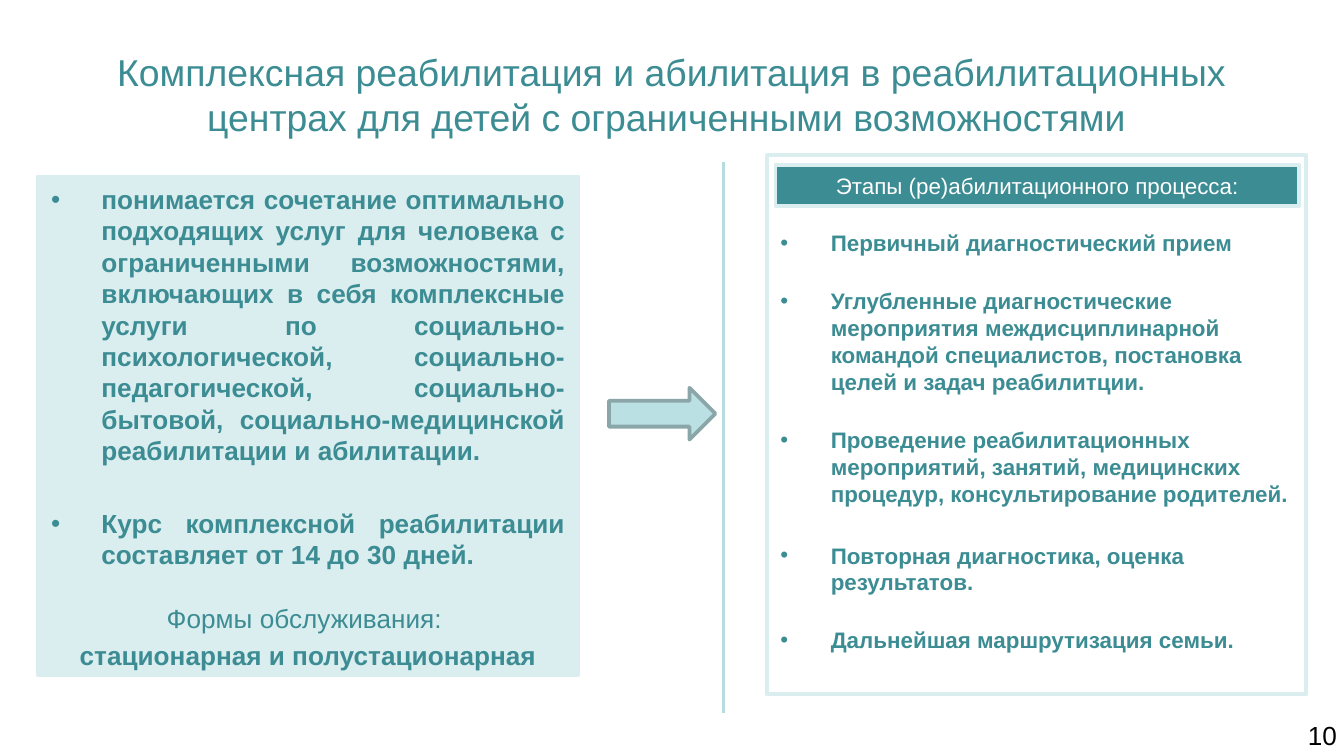
from lxml import etree
from pptx import Presentation
from pptx import util as u
from pptx.dml.color import RGBColor
from pptx.enum import shapes, text
from pptx.oxml.ns import qn

PX = 9525  # EMU: 96 px to the inch
TEAL, PALE, WHITE = "3C8C93", "DAEDEF", "FFFFFF"
ALIGN = text.PP_ALIGN
LEFT, CENTER, RIGHT, JUSTIFY = ALIGN.LEFT, ALIGN.CENTER, ALIGN.RIGHT, ALIGN.JUSTIFY

TITLE = ("Комплексная реабилитация и абилитация в реабилитационных "
         "центрах для детей с ограниченными возможностями ")

# text, space before in points, bullet, bold, alignment
SERVICES = [
    ("понимается сочетание оптимально подходящих услуг для человека с "
     "ограниченными возможностями, включающих в себя комплексные услуги по "
     "социально-психологической, социально-педагогической, социально-бытовой, "
     "социально-медицинской реабилитации и абилитации. ", 0, True, True, JUSTIFY),
    ("Курс комплексной реабилитации составляет от 14 до 30 дней. ",
     22.3, True, True, JUSTIFY),
    ("Формы обслуживания: ", 17, False, False, CENTER),
    ("стационарная и полустационарная", 3, False, True, CENTER),
]
STAGES = [
    ("Первичный диагностический прием", 0),
    ("Углубленные диагностические мероприятия междисциплинарной командой "
     "специалистов, постановка целей и задач реабилитции.", 16.6),
    ("Проведение реабилитационных мероприятий, занятий, медицинских процедур, "
     "консультирование родителей.", 16.6),
    ("Повторная диагностика, оценка результатов.", 18.8),
    ("Дальнейшая маршрутизация семьи.", 16.6),
]


def px(*lengths):
    return [u.Emu(n * PX) for n in lengths]


def rgb(color):
    return RGBColor.from_string(color)


def style_fill(fill, color):
    fill.solid()
    fill.fore_color.rgb = rgb(color)


def style_line(line, color, width):
    line.color.rgb = rgb(color)
    line.width = u.Pt(width)


def format_paragraph(p, size, color, bold=False, align=LEFT):
    p.alignment = align
    for r in p.runs:
        r.font.name = "Arial"
        r.font.size = u.Pt(size)
        r.font.bold = bold
        r.font.color.rgb = rgb(color)


def add_bullet(p, indent=36):
    """Give the paragraph a round bullet with a hanging indent."""
    pPr = p._p.get_or_add_pPr()
    pPr.set("marL", str(indent * PX))
    pPr.set("indent", str(-indent * PX))
    etree.SubElement(pPr, qn("a:buFont"), typeface="Arial")
    etree.SubElement(pPr, qn("a:buChar"), char="•")


def add_title(s, box):
    title = s.shapes.title
    title.left, title.top, title.width, title.height = px(*box)
    tf = title.text_frame
    tf.text = TITLE
    tf.auto_size = text.MSO_AUTO_SIZE.NONE
    tf.vertical_anchor = text.MSO_ANCHOR.MIDDLE
    format_paragraph(tf.paragraphs[0], 20, TEAL, align=CENTER)


def add_text_panel(s, box, rows, size, top_margin=5):
    panel = s.shapes.add_textbox(*px(*box))
    style_line(panel.line, PALE, 2)
    tf = panel.text_frame
    tf.word_wrap = True
    tf.margin_top, = px(top_margin)
    for i, (words, before, bullet, bold, align) in enumerate(rows):
        p = tf.add_paragraph() if i else tf.paragraphs[0]
        p.text = words
        if before:
            p.space_before = u.Pt(before)
        if bullet:
            add_bullet(p)
        format_paragraph(p, size, TEAL, bold, align)
    return panel


def add_shape(s, kind, box, fill, line):
    sp = s.shapes.add_shape(kind, *px(*box))
    sp.shadow.inherit = False
    style_fill(sp.fill, fill)
    style_line(sp.line, line, 2)
    return sp


def add_divider(s, x, top, bottom):
    divider = s.shapes.add_connector(shapes.MSO_CONNECTOR.STRAIGHT,
                                     *px(x, top, x, bottom))
    style_line(divider.line, "B6DCDF", 1.5)
    etree.SubElement(divider._element.spPr, qn("a:effectLst"))


def add_stages_header(s, box):
    header = add_shape(s, shapes.MSO_SHAPE.RECTANGLE, box, TEAL, PALE)
    tf = header.text_frame
    tf.text = "Этапы (ре)абилитационного процесса:"
    tf.vertical_anchor = text.MSO_ANCHOR.MIDDLE
    format_paragraph(tf.paragraphs[0], 12, WHITE, align=CENTER)


def add_page_number(s, box):
    number = s.shapes.add_textbox(*px(*box))
    tf = number.text_frame
    tf.word_wrap = True
    tf.margin_right, = px(5)
    tf.text = "10"
    format_paragraph(tf.paragraphs[0], 14, "000000", align=RIGHT)


def main():
    prs = Presentation()
    prs.slide_width, prs.slide_height = px(960, 540)
    s = prs.slides.add_slide(prs.slide_layouts[5])

    add_title(s, (48, 22, 864, 90))
    services = add_text_panel(s, (27, 126, 386, 356), SERVICES, 14)
    style_fill(services.fill, PALE)

    stages = [(words, before, True, True, LEFT) for words, before in STAGES]
    add_text_panel(s, (548, 111, 385, 385), stages, 12, top_margin=53)

    add_page_number(s, (741, 509, 219, 31))
    add_divider(s, 517, 116, 509)
    add_stages_header(s, (554, 118, 374, 29))
    add_shape(s, shapes.MSO_SHAPE.RIGHT_ARROW, (435, 277, 76, 37), "BBE0E3", "8AA6A8")
    prs.save("out.pptx")


if __name__ == "__main__":
    main()
